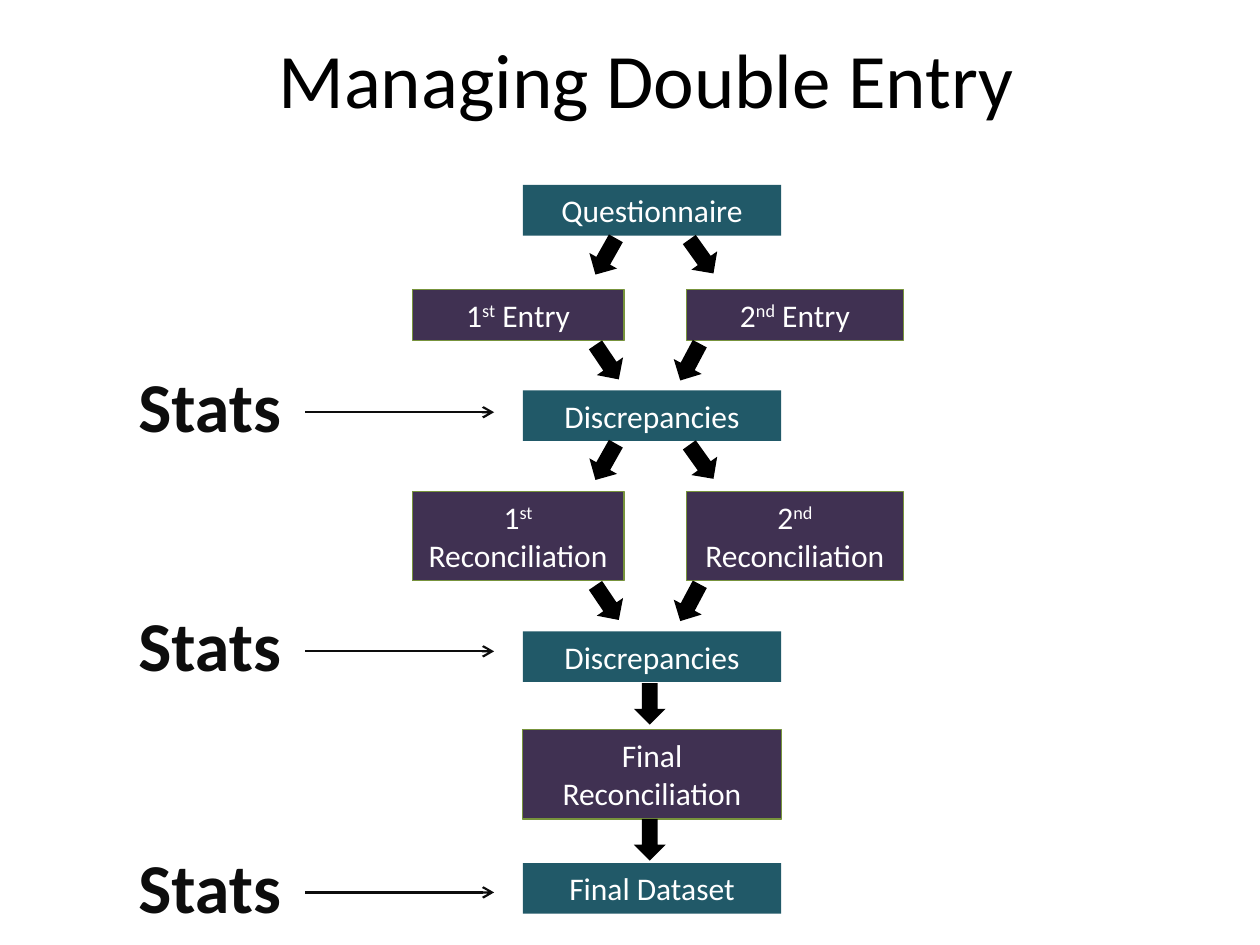
from lxml.etree import SubElement
from pptx import Presentation
from pptx.dml.color import RGBColor
from pptx.enum.shapes import MSO_CONNECTOR as Link, MSO_SHAPE as Shape
from pptx.enum.text import MSO_ANCHOR as Anchor, PP_ALIGN as Align
from pptx.oxml.ns import qn
from pptx.util import Cm, Pt

TEAL, PLUM, GREEN = "215968", "403152", "77933C"
BLACK, INK, WHITE = "000000", "0D0D0D", "FFFFFF"


def paint(color, code):
    color.rgb = RGBColor.from_string(code)


def write(shape, parts, size, code, align, anchor=Anchor.TOP):
    """Fill shape with one paragraph; every second part is superscript."""
    frame = shape.text_frame
    frame.word_wrap = True
    frame.vertical_anchor = anchor
    para = frame.paragraphs[0]
    para.alignment = align
    para.font.size = Pt(size)
    para.font.name = "Calibri"
    paint(para.font.color, code)
    for i, part in enumerate(parts):
        run = para.add_run()
        run.text = part
        if i % 2:
            run._r.get_or_add_rPr().set("baseline", "30000")
    return para


deck = Presentation()
deck.slide_width, deck.slide_height = Cm(25.4), Cm(19.05)
slide = deck.slides.add_slide(deck.slide_layouts[6])
shapes = slide.shapes

title = shapes.add_textbox(Cm(1.7), Cm(0.2), Cm(22.66), Cm(2.74))
write(title, ["Managing Double Entry"], 44, BLACK, Align.CENTER, Anchor.MIDDLE)

# Boxes: column (left, width), top, height, fill, text parts
LEFT, MID, RIGHT = (8.31, 4.27), (10.54, 5.21), (13.84, 4.37)
LOW, HIGH = 1.02, 1.8
boxes = [
    (MID, 3.73, LOW, TEAL, ["Questionnaire"]),
    (LEFT, 5.84, LOW, PLUM, ["1", "st", " Entry"]),
    (RIGHT, 5.84, LOW, PLUM, ["2", "nd", " Entry"]),
    (MID, 7.87, LOW, TEAL, ["Discrepancies"]),
    (LEFT, 9.91, HIGH, PLUM, ["1", "st", " Reconciliation"]),
    (RIGHT, 9.91, HIGH, PLUM, ["2", "nd", " Reconciliation"]),
    (MID, 12.73, LOW, TEAL, ["Discrepancies"]),
    (MID, 14.71, HIGH, PLUM, ["Final Reconciliation"]),
    (MID, 17.4, LOW, TEAL, ["Final Dataset"]),
]
for (left, width), top, height, fill, parts in boxes:
    box = shapes.add_shape(Shape.RECTANGLE, Cm(left), Cm(top), Cm(width), Cm(height))
    box.shadow.inherit = False
    box.fill.solid()
    paint(box.fill.fore_color, fill)
    if fill == PLUM:
        paint(box.line.color, GREEN)
        box.line.width = Pt(0.75)
    else:
        box.line.fill.background()
    write(box, parts, 18, WHITE, Align.CENTER)

# Block arrows: each row has a top and (left, turn) pairs
split = [(11.89, 29.4), (13.82, 324.5)]
merge = [(11.92, 326), (13.59, 28)]
down = [(12.78, 0)]
flows = [(4.75, split), (6.88, merge), (8.89, split),
         (11.73, merge), (13.77, down), (16.51, down)]
for top, row in flows:
    for left, turn in row:
        arrow = shapes.add_shape(Shape.DOWN_ARROW, Cm(left), Cm(top), Cm(0.64), Cm(0.84))
        arrow.rotation = turn
        arrow.shadow.inherit = False
        arrow.fill.solid()
        paint(arrow.fill.fore_color, BLACK)
        arrow.line.fill.background()

# Tool labels, each with a thin arrow toward its step
for top in (7.19, 12.01, 16.87):
    label = shapes.add_textbox(Cm(2.54), Cm(top), Cm(3.81), Cm(1.96))
    write(label, ["Stats"], 40, INK, Align.LEFT).font.bold = True
    y = Cm(top + 1.12)
    line = shapes.add_connector(Link.STRAIGHT, Cm(6.15), y, Cm(9.96), y)
    paint(line.line.color, INK)
    line.line.width = Pt(1.25)
    SubElement(line.line._get_or_add_ln(), qn("a:tailEnd"), type="arrow")
    SubElement(line._element.spPr, qn("a:effectLst"))

deck.save("out.pptx")
